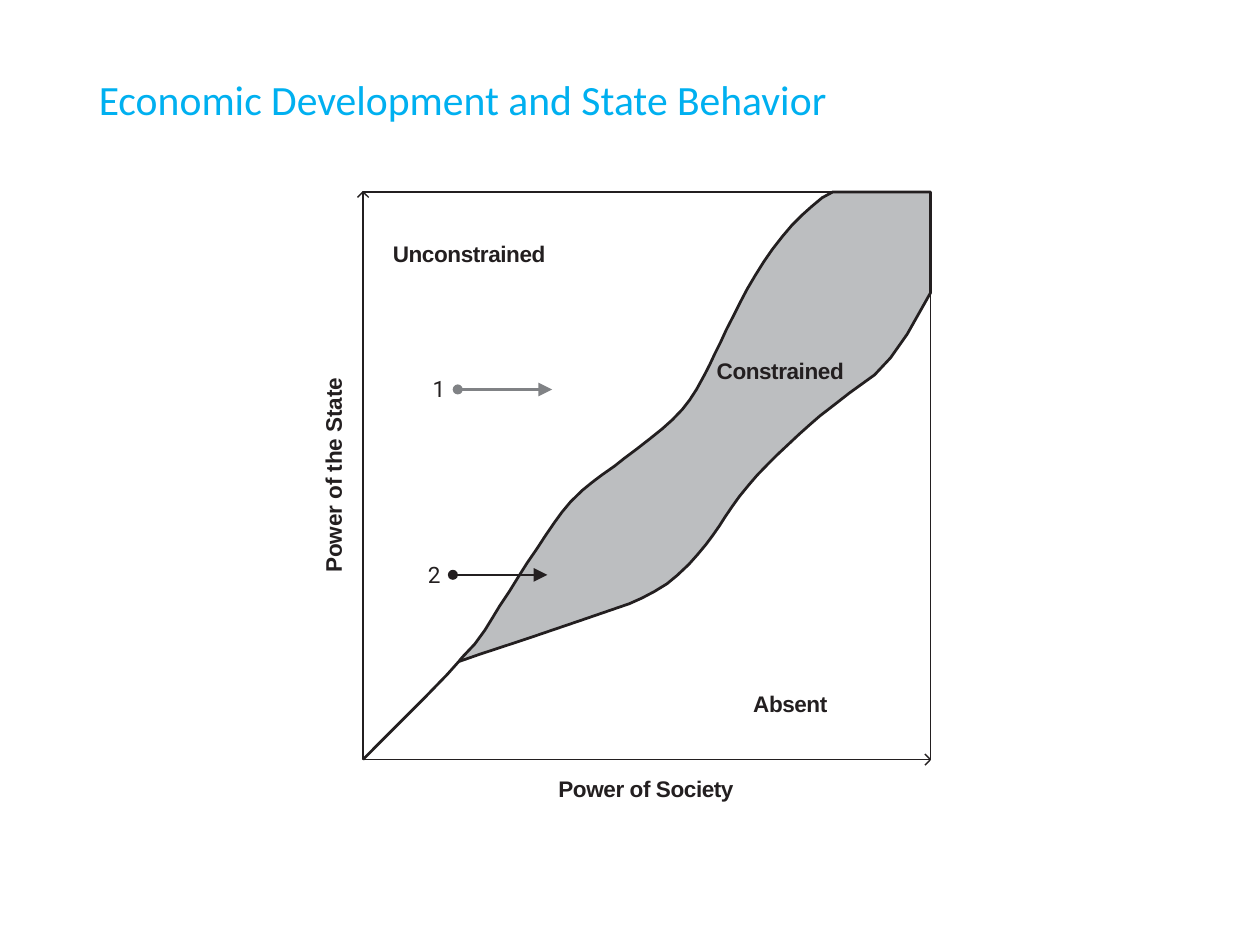
from dataclasses import dataclass

from lxml.etree import SubElement
from pptx import Presentation
from pptx.dml.color import RGBColor
from pptx.enum.shapes import MSO_CONNECTOR, MSO_SHAPE
from pptx.oxml.ns import qn
from pptx.util import Pt


@dataclass(frozen=True)
class Theme:
    title_color: str = "00B0F0"
    ink: str = "231F20"
    band: str = "BCBEC0"
    muted: str = "808285"
    title_font: str = "Calibri"
    label_font: str = "Arial"
    number_font: str = "Roboto"
    title_size: float = 12
    label_size: float = 6.5
    thin: float = 0.4
    thick: float = 0.8


THEME = Theme()
SLIDE_WIDTH, SLIDE_HEIGHT = 363, 272.5

# text, left, top, width, height
TITLE = ("Economic Development and State Behavior", 28.5, 21.4, 260, 16)
LABELS = [
    ("Absent", 217, 198.8, 40, 9),
    ("Power of Society", 160.9, 223.4, 70, 9),
    ("Constrained", 206.5, 102.8, 50, 9),
    ("Unconstrained", 113.2, 69.1, 60, 9),
]
VERTICAL_LABEL = ("Power of the State", 92, 104.9, 9, 60)

# number, centre of the starting dot, colour
PATHWAYS = [
    ("2", 130.5, 165.6, THEME.ink),
    ("1", 131.9, 112.2, THEME.muted),
]
PATHWAY_LENGTH = 27.2
DOT = 2.9

LEFT, TOP, SIDE = 104.6, 55.3, 163.5
RIGHT, BOTTOM = LEFT + SIDE, TOP + SIDE
CHEVRON = 1.6

FORK = (132.2, 190.6)
STEM = [(LEFT, BOTTOM), (113, 210.4), (118.1, 205.3), (122.4, 201), (128.9, 194.3)]
UPPER_CURVE = [
    (133.2, 189.4), (136.8, 185.6), (139.7, 181.6), (141.8, 178.2), (144, 174.6),
    (146.9, 170.2), (149.2, 166.5), (151.9, 162.2), (154.8, 158), (157.2, 154.3),
    (159.8, 150.5), (162, 147.5), (164.4, 144.6), (167.8, 141.3), (170.6, 139),
    (173.5, 136.8), (177.1, 134.3), (180, 132), (183.6, 129.3), (187.2, 126.5),
    (190.8, 123.6), (193.7, 121), (196.6, 118), (198.7, 115.3), (200.7, 112.2),
    (203, 108), (204.5, 105.1), (205.9, 102.1), (207.6, 98.7), (209.3, 95),
    (211.2, 91.3), (213.2, 87.3), (215.3, 83.3), (217.6, 79.4), (220.1, 75.4),
    (222.6, 71.8), (225.4, 68.2), (228.2, 64.9), (231.1, 62), (234, 59.4),
    (236.9, 57), (240, TOP),
]
CORNER = [(RIGHT, TOP), (RIGHT, 84.4)]
LOWER_CURVE = [
    (261.4, 96.3), (256.6, 103.1), (252, 108), (244.8, 113.2), (239.8, 117.1),
    (236.2, 119.9), (233.3, 122.4), (230.4, 125), (227.3, 127.9), (224, 131),
    (221, 134), (218.2, 136.9), (215.8, 139.7), (213.1, 143), (211, 145.9),
    (208.9, 149), (207.3, 151.5), (205.4, 154.2), (203.4, 156.9), (201, 159.8),
    (198.5, 162.6), (195.1, 165.8), (192.2, 168.2), (188.6, 170.4), (185, 172.3),
    (181.4, 173.9), (167.8, 178.6), (151.9, 184), (138.2, 188.5),
]
BAND_OUTLINE = STEM + [FORK] + UPPER_CURVE + CORNER + LOWER_CURVE + [FORK]


def color(value):
    return RGBColor.from_string(value)


def paint(shape, fill=None, line=None, width=THEME.thin):
    shape.shadow.inherit = False
    if fill:
        shape.fill.solid()
        shape.fill.fore_color.rgb = color(fill)
    else:
        shape.fill.background()
    if line:
        shape.line.color.rgb = color(line)
        shape.line.width = Pt(width)
    else:
        shape.line.fill.background()


def add_outline(slide, points, close=False, **style):
    (start_x, start_y), *rest = [(Pt(x), Pt(y)) for x, y in points]
    builder = slide.shapes.build_freeform(start_x, start_y)
    builder.add_line_segments(rest, close=close)
    paint(builder.convert_to_shape(), **style)


def add_text(slide, text, left, top, width, height, font, size, ink,
             bold=False, spacing=0):
    box = slide.shapes.add_textbox(Pt(left), Pt(top), Pt(width), Pt(height))
    frame = box.text_frame
    frame.margin_left = frame.margin_top = frame.margin_right = frame.margin_bottom = 0
    frame.word_wrap = True
    frame.text = text
    run = frame.paragraphs[0].runs[0]
    run.font.name = font
    run.font.size = Pt(size)
    run.font.bold = bold
    run.font.color.rgb = color(ink)
    run.font._element.set("spc", str(round(spacing * 100)))
    return box


def add_label(slide, label, spacing=-0.1):
    return add_text(slide, *label, THEME.label_font, THEME.label_size, THEME.ink,
                    bold=True, spacing=spacing)


def add_plot(slide):
    frame = slide.shapes.add_shape(
        MSO_SHAPE.RECTANGLE, Pt(LEFT), Pt(TOP), Pt(SIDE), Pt(SIDE))
    paint(frame, line=THEME.ink)
    up = [(LEFT - CHEVRON, TOP + CHEVRON), (LEFT, TOP), (LEFT + CHEVRON, TOP + CHEVRON)]
    across = [(RIGHT - CHEVRON, BOTTOM - CHEVRON), (RIGHT, BOTTOM),
              (RIGHT - CHEVRON, BOTTOM + CHEVRON)]
    for tip in (up, across):
        add_outline(slide, tip, line=THEME.ink)
    add_outline(slide, BAND_OUTLINE, close=True, fill=THEME.band)
    add_outline(slide, BAND_OUTLINE, line=THEME.ink, width=THEME.thick)


def add_pathway(slide, number, x, y, ink):
    """Draw a numbered dot with an arrow pointing right."""
    add_text(slide, number, x - 7.2, y - 4.1, 5, 9,
             THEME.number_font, THEME.label_size, THEME.ink)
    arrow = slide.shapes.add_connector(
        MSO_CONNECTOR.STRAIGHT, Pt(x), Pt(y), Pt(x + PATHWAY_LENGTH), Pt(y))
    arrow.line.color.rgb = color(ink)
    arrow.line.width = Pt(THEME.thick)
    SubElement(arrow.line._get_or_add_ln(), qn("a:tailEnd"),
               type="triangle", w="sm", len="sm")
    SubElement(arrow._element.spPr, qn("a:effectLst"))
    dot = slide.shapes.add_shape(
        MSO_SHAPE.OVAL, Pt(x - DOT / 2), Pt(y - DOT / 2), Pt(DOT), Pt(DOT))
    paint(dot, fill=ink)


def main():
    presentation = Presentation()
    presentation.slide_width = Pt(SLIDE_WIDTH)
    presentation.slide_height = Pt(SLIDE_HEIGHT)
    slide = presentation.slides.add_slide(presentation.slide_layouts[6])
    add_text(slide, *TITLE, THEME.title_font, THEME.title_size, THEME.title_color)
    add_plot(slide)
    for label in LABELS:
        add_label(slide, label)
    vertical = add_label(slide, VERTICAL_LABEL, spacing=-0.03)
    vertical.text_frame._txBody.bodyPr.set("vert", "vert270")
    for pathway in PATHWAYS:
        add_pathway(slide, *pathway)
    presentation.save("out.pptx")


if __name__ == "__main__":
    main()
